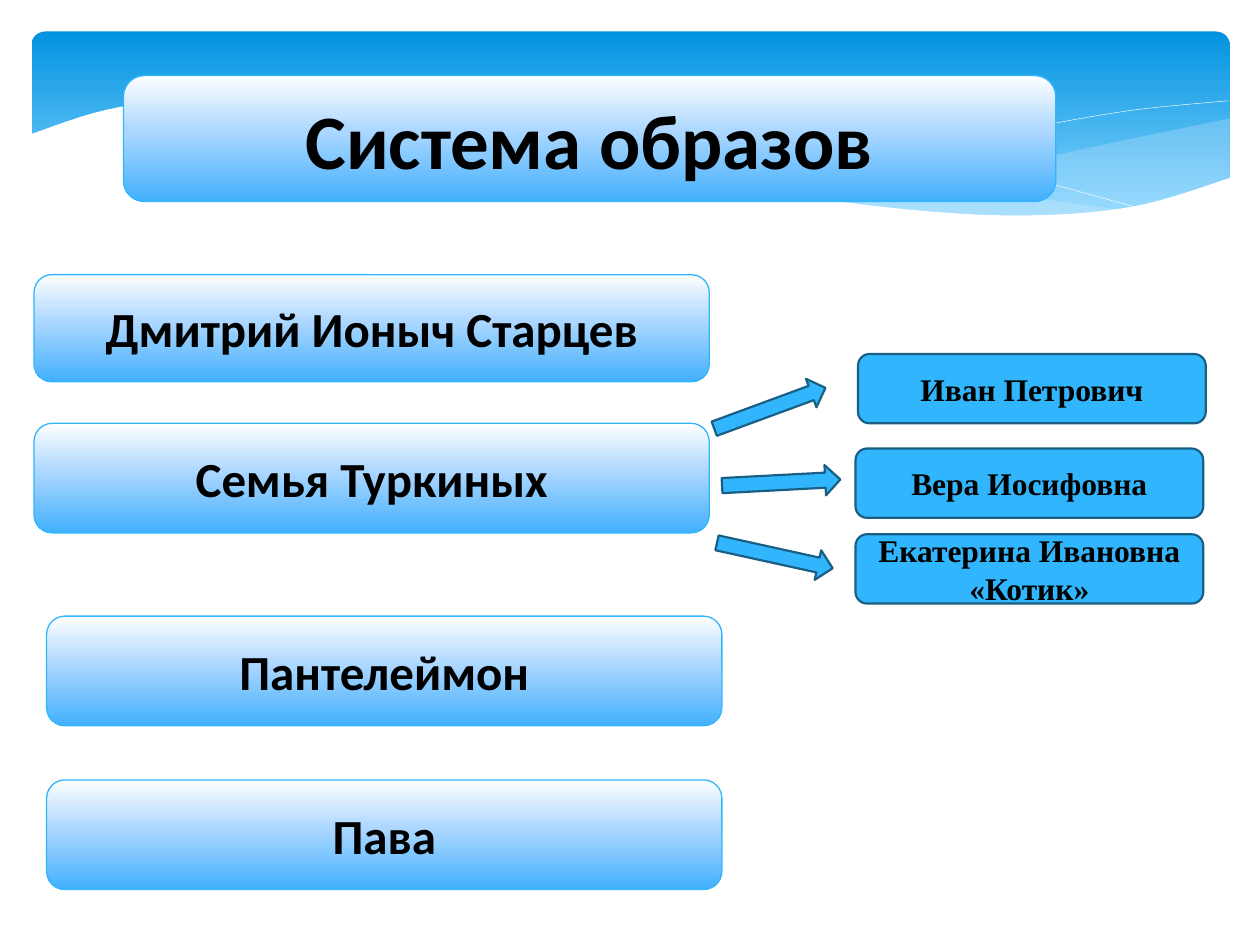
import pptx
import pptx.util
import pptx.dml.color
import pptx.enum.shapes
import pptx.enum.text
import pptx.oxml.ns
from lxml import etree

Inches = pptx.util.Inches
Shape = pptx.enum.shapes.MSO_SHAPE
qn = pptx.oxml.ns.qn

# Content; places and sizes are in inches
TITLE = "Система образов"
HEROES = [  # text, left, top, height
    ("Дмитрий Ионыч Старцев", 0.27, 2.18, 0.85),
    ("Семья Туркиных", 0.27, 3.36, 0.87),
    ("Пантелеймон", 0.37, 4.89, 0.87),
    ("Пава", 0.37, 6.19, 0.87),
]
FAMILY = [  # text, card corner, arrow corner, arrow turn in degrees
    ("Иван Петрович", (6.81, 2.81), (5.64, 3.12), -20.2),
    ("Вера Иосифовна", (6.79, 3.56), (5.73, 3.71), -3),
    ("Екатерина Ивановна «Котик»", (6.79, 4.24), (5.68, 4.29), 12.4),
]

# Style
BLUE, NAVY, PALE = "31B6FD", "195F84", "C6E7FC"
WHITE, BLACK = "FFFFFF", "000000"
SKY = [(0, "0293E0"), (90, "83D3FE")]  # percent, colour
GLOSS = [(0, WHITE), (44, "ACD7FF"), (100, "42B0FD")]
SANS, SERIF = "Calibri", "Times New Roman"

# Banner: each edge is a few knots that a smooth curve runs through
BANNER = (0.25, 0.25, 9.51, 1.56)
TITLE_BOX = (0.98, 0.6, 7.4, 1)
SIDE_TOP = [(9.76, 0.94), (8.61, 1.18), (7.53, 1.43), (6.61, 1.6)]
SIDE_LOW = [(6.61, 1.6), (7.45, 1.69), (8.24, 1.72), (8.97, 1.65),
            (9.76, 1.41)]
BACK_TOP = [(8.93, 1.67), (7.75, 1.49), (6.29, 1.16), (5.14, 0.92),
            (3.99, 0.81), (2.86, 0.86)]
BACK_LOW = [(2.86, 0.86), (4.49, 1.16), (6.01, 1.5), (7.22, 1.68),
            (8.18, 1.73), (8.93, 1.67)]
FRONT_TOP = [(9.77, 1.41), (8.99, 1.64), (8.09, 1.71), (7.08, 1.65),
             (6.03, 1.49), (4.47, 1.14), (3.15, 0.88), (1.93, 0.78),
             (0.95, 0.85), (0.23, 1.07)]
FRONT_LOW = [(0.23, 2.24), (9.77, 2.24)]
WAVES = [  # edges, opacity in percent
    ((SIDE_TOP, SIDE_LOW), 29),
    ((BACK_TOP, BACK_LOW), 40),
]
LINES = [
    [(3.09, 0.9), (4.16, 0.81), (5.33, 0.88), (6.65, 1.08), (7.95, 1.36),
     (9.07, 1.66)],
    [(6.13, 1.51), (7.2, 1.24), (8.06, 1.04), (8.95, 0.88), (9.75, 0.8)],
]
STEPS = 8  # straight pieces between two knots


def rgb(code):
    return pptx.dml.color.RGBColor.from_string(code)


def paint(shape, fill=None, line=None, width=0.75):
    """Fill with a hex colour or a list of gradient stops, and outline."""
    if isinstance(fill, list):
        shape.fill.gradient()
        shape.fill.gradient_angle = 270
        stops = next(shape._element.spPr.iter(qn("a:gsLst")))
        for old in list(stops):
            stops.remove(old)
        for pos, code in fill:
            stop = etree.SubElement(stops, qn("a:gs"), pos=str(pos * 1000))
            etree.SubElement(stop, qn("a:srgbClr"), val=code)
    elif fill:
        shape.fill.solid()
        shape.fill.fore_color.rgb = rgb(fill)
    else:
        shape.fill.background()
    if line:
        shape.line.color.rgb = rgb(line)
        shape.line.width = pptx.util.Pt(width)
    else:
        shape.line.fill.background()


def fade(shape, percent):
    """Set the opacity of a solid fill."""
    color = next(shape._element.spPr.iter(qn("a:srgbClr")))
    etree.SubElement(color, qn("a:alpha"), val=str(percent * 1000))


def write(shape, text, size, font):
    frame = shape.text_frame
    frame.word_wrap = True
    frame.auto_size = pptx.enum.text.MSO_AUTO_SIZE.NONE
    frame.vertical_anchor = pptx.enum.text.MSO_ANCHOR.MIDDLE
    frame.text = text
    para = frame.paragraphs[0]
    para.alignment = pptx.enum.text.PP_ALIGN.CENTER
    para.font.name, para.font.size = font, pptx.util.Pt(size)
    para.font.bold = True
    para.font.color.rgb = rgb(BLACK)


def add(slide, kind, *box):
    shape = slide.shapes.add_shape(kind, *map(Inches, box))
    shape.shadow.inherit = False
    return shape


def add_card(slide, *box):
    return add(slide, Shape.ROUNDED_RECTANGLE, *box)


def blend(a, b, c, d, t):
    """Catmull-Rom value at t, from 0 at b to 1 at c."""
    return b + t / 2 * (c - a + t * (2 * a - 5 * b + 4 * c - d
                                     + t * (3 * (b - c) + d - a)))


def curve(knots):
    """Points of a smooth curve through the knots."""
    if len(knots) < 3:
        return knots
    ends = [knots[0], *knots, knots[-1]]
    points = [
        tuple(blend(*axis, step / STEPS) for axis in zip(*four))
        for four in zip(ends, ends[1:], ends[2:], ends[3:])
        for step in range(STEPS)
    ]
    return points + [knots[-1]]


def trace(slide, *edges, close=True):
    """Join smooth edges into one freeform."""
    spots = [(Inches(x), Inches(y)) for edge in edges for x, y in curve(edge)]
    pen = slide.shapes.build_freeform(*spots[0])
    pen.add_line_segments(spots[1:], close=close)
    shape = pen.convert_to_shape()
    shape.shadow.inherit = False
    return shape


def add_banner(slide):
    panel = add_card(slide, *BANNER)
    panel.adjustments[0] = 0.07
    paint(panel, SKY)
    for edges, percent in WAVES:
        wave = trace(slide, *edges)
        paint(wave, PALE)
        fade(wave, percent)
    for knots in LINES:
        paint(trace(slide, knots, close=False), None, WHITE, 0.25)
    paint(trace(slide, FRONT_TOP, FRONT_LOW), WHITE)


def add_title(slide):
    paint(add_card(slide, *TITLE_BOX), GLOSS, BLUE)
    title = slide.shapes.title
    title.left, title.top, title.width, title.height = map(Inches, TITLE_BOX)
    write(title, TITLE, 44, SANS)
    slide.shapes._spTree.append(title._element)  # in front of its card


def add_heroes(slide):
    for text, left, top, height in HEROES:
        card = add_card(slide, left, top, 5.36, height)
        paint(card, GLOSS, BLUE)
        write(card, text, 28, SANS)


def add_family(slide):
    for text, corner, start, turn in FAMILY:
        arrow = add(slide, Shape.RIGHT_ARROW, *start, 0.94, 0.24)
        arrow.rotation = turn
        card = add_card(slide, *corner, 2.76, 0.55)
        for shape in (arrow, card):
            paint(shape, BLUE, NAVY, 1.25)
        write(card, text, 18, SERIF)


def main():
    deck = pptx.Presentation()
    deck.slide_width, deck.slide_height = Inches(10), Inches(7.5)
    slide = deck.slides.add_slide(deck.slide_layouts[5])  # title only
    for build in (add_banner, add_title, add_heroes, add_family):
        build(slide)
    deck.save("out.pptx")


if __name__ == "__main__":
    main()
